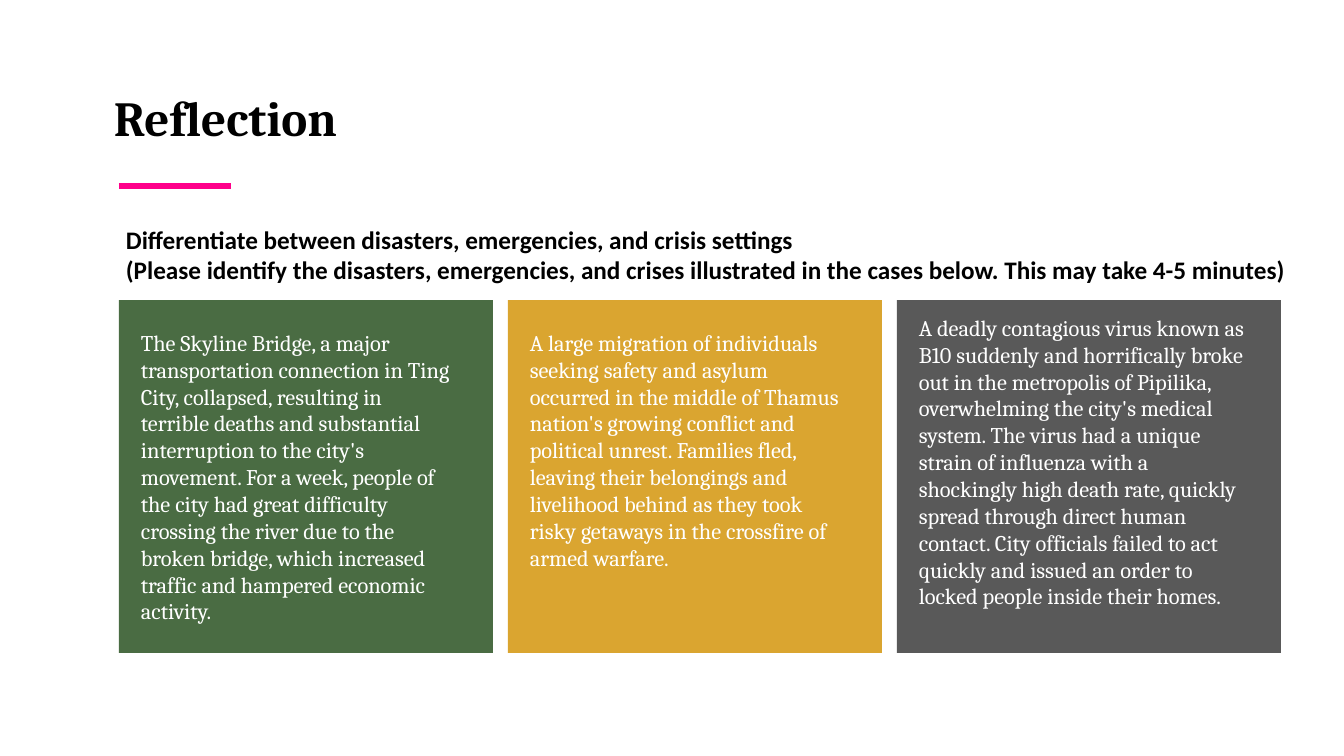
from pptx import Presentation
from pptx.dml.color import RGBColor
from pptx.enum.shapes import MSO_CONNECTOR as Line, MSO_SHAPE as Shape
from pptx.util import Pt
from lxml.etree import SubElement
from pptx.oxml.ns import qn

TITLE = "Reflection"
PROMPT = [
    "Differentiate between disasters, emergencies, and crisis settings",
    "(Please identify the disasters, emergencies, and crises illustrated in "
    "the cases below. This may take 4-5 minutes)",
]
# fill, card width, text top, text width, text height, story
CASES = [
    ("4A6C43", 374, 324, 334, 308,
     "The Skyline Bridge, a major transportation connection in Ting City, "
     "collapsed, resulting in terrible deaths and substantial interruption "
     "to the city's movement. For a week, people of the city had great "
     "difficulty crossing the river due to the broken bridge, which "
     "increased traffic and hampered economic activity."),
    ("DAA530", 374, 324, 334, 281,
     "A large migration of individuals seeking safety and asylum occurred in "
     "the middle of Thamus nation's growing conflict and political unrest. "
     "Families fled, leaving their belongings and livelihood behind as they "
     "took risky getaways in the crossfire of armed warfare."),
    ("595959", 384, 309, 349, 336,
     "A deadly contagious virus known as B10 suddenly and horrifically broke "
     "out in the metropolis of Pipilika, overwhelming the city's medical "
     "system. The virus had a unique strain of influenza with a shockingly "
     "high death rate, quickly spread through direct human contact. City "
     "officials failed to act quickly and issued an order to locked people "
     "inside their homes."),
]
LEFT, TOP, HIGH, GAP, PAD = 119, 300, 353, 15, 12


def px(*sizes):
    """Turn pixels at 100.8 to the inch into EMU."""
    return [round(size * 914400 / 100.8) for size in sizes]


def color(code):
    return RGBColor.from_string(code)


def write(lines, *place, size=16, font="Cambria", ink="FFFFFF", bold=False):
    frame = slide.shapes.add_textbox(*px(*place)).text_frame
    frame.word_wrap = True
    frame.text = "\n".join(lines)
    for para in frame.paragraphs:
        para.font.size = Pt(size)
        para.font.name = font
        para.font.bold = bold
        para.font.color.rgb = color(ink)


def card(fill, *place):
    box = slide.shapes.add_shape(Shape.RECTANGLE, *px(*place))
    box.shadow.inherit = False
    box.fill.solid()
    box.fill.fore_color.rgb = color(fill)
    box.line.fill.background()


deck = Presentation()
deck.slide_width, deck.slide_height = px(1344, 756)
slide = deck.slides.add_slide(deck.slide_layouts[6])

write([TITLE], 104, 83, 672, 70, size=35, ink="000000", bold=True)

rule = slide.shapes.add_connector(Line.STRAIGHT, *px(LEFT, 186, 231, 186))
rule.line.color.rgb = color("FF008A")
rule.line.width = Pt(4.5)
SubElement(rule.element.spPr, qn("a:effectLst"))

write(PROMPT, 116, 219, 1183, 72, size=18, font="Calibri", ink="000000",
      bold=True)

left = LEFT
for fill, wide, top, text_wide, text_high, story in CASES:
    card(fill, left, TOP, wide, HIGH)
    write([story], left + PAD, top, text_wide, text_high)
    left += wide + GAP

deck.save("out.pptx")
